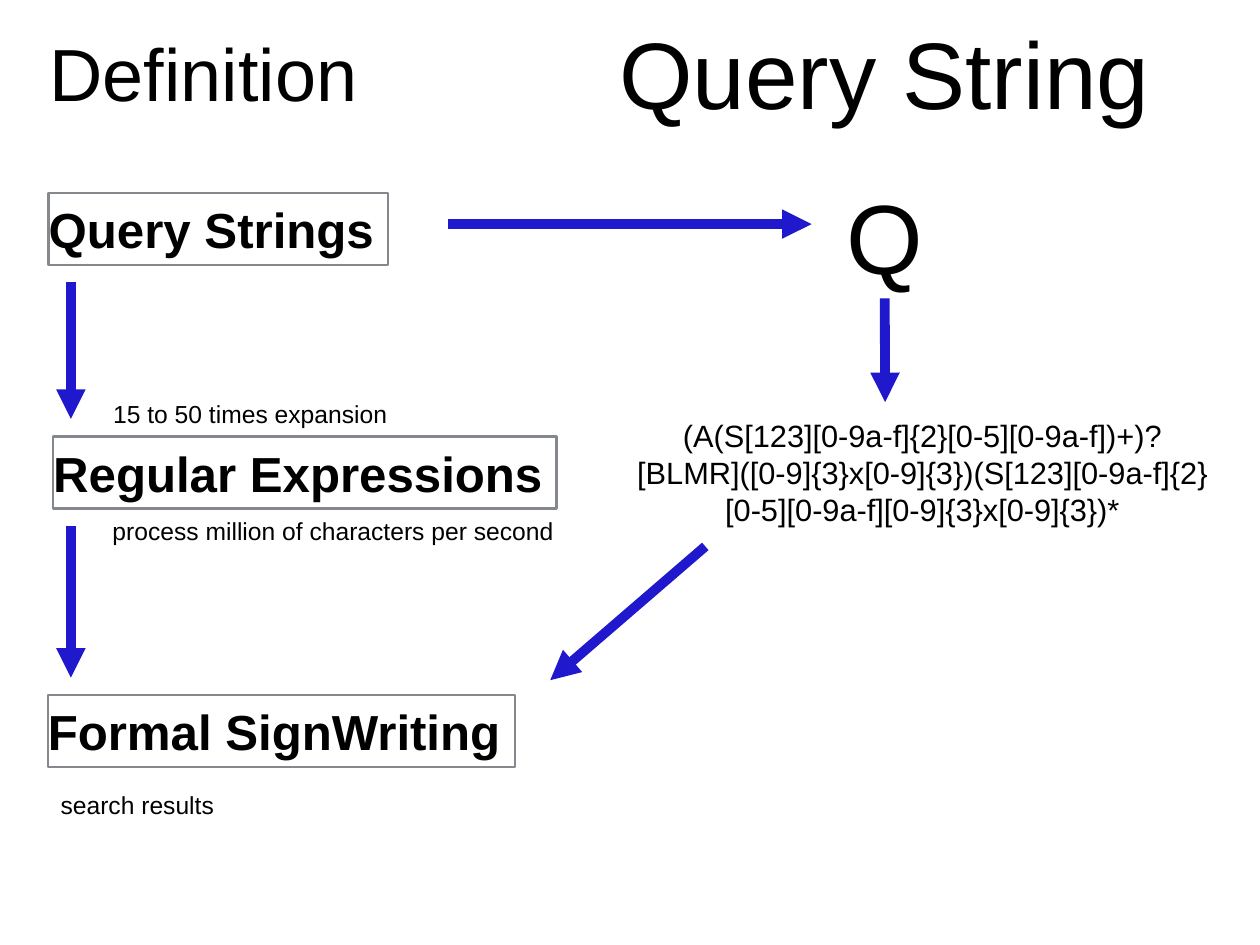
from lxml import etree
from pptx import Presentation
from pptx.dml.color import RGBColor
from pptx.enum.shapes import MSO_CONNECTOR, MSO_SHAPE
from pptx.enum.text import MSO_ANCHOR, MSO_AUTO_SIZE, PP_ALIGN
from pptx.oxml.ns import qn
from pptx.util import Inches, Pt

BLACK, GREY, BLUE = "000000", "85888D", "1F18CD"
REGEX = ("(A(S[123][0-9a-f]{2}[0-5][0-9a-f])+)?"
         "[BLMR]([0-9]{3}x[0-9]{3})"
         "(S[123][0-9a-f]{2}[0-5][0-9a-f][0-9]{3}x[0-9]{3})*")


def color(value):
    return RGBColor.from_string(value)


def write(sp, text, size, align=PP_ALIGN.CENTER, bold=False, inset=0, wrap=True):
    """Fill a shape with one formatted paragraph."""
    tf = sp.text_frame
    frame = {"word_wrap": wrap, "auto_size": MSO_AUTO_SIZE.NONE,
             "vertical_anchor": MSO_ANCHOR.MIDDLE}
    for side in ("left", "top", "right", "bottom"):
        frame[f"margin_{side}"] = Inches(inset)
    for name, value in frame.items():
        setattr(tf, name, value)
    p = tf.paragraphs[0]
    p.alignment = align
    r = p.add_run()
    r.text = text
    for name, value in {"name": "Arial", "size": Pt(size), "bold": bold}.items():
        setattr(r.font, name, value)
    r.font.color.rgb = color(BLACK)


def add_text(s, box, text, size, **options):
    sp = s.shapes.add_textbox(*map(Inches, box))
    write(sp, text, size, **options)
    return sp


def add_stage(s, box, text):
    """Outlined box naming one stage of the search."""
    sp = s.shapes.add_shape(MSO_SHAPE.RECTANGLE, *map(Inches, box))
    sp.shadow.inherit = False
    sp.fill.background()
    sp.line.color.rgb = color(GREY)
    sp.line.width = Pt(2)
    write(sp, text, 40, align=PP_ALIGN.LEFT, bold=True)


def add_arrow(s, start, end):
    cxn = s.shapes.add_connector(MSO_CONNECTOR.STRAIGHT, *map(Inches, start + end))
    cxn.line.color.rgb = color(BLUE)
    cxn.line.width = Pt(8)
    etree.SubElement(cxn.line._get_or_add_ln(), qn("a:tailEnd"), type="triangle")
    etree.SubElement(cxn._element.spPr, qn("a:effectLst"))
    return cxn


def add_headings(s, box):
    """Title on the left, example heading on the right."""
    x, y, w, h = box
    title = s.shapes.title
    place = {"left": x, "top": y, "width": 5.75, "height": h}
    for name, value in place.items():
        setattr(title, name, Inches(value))
    write(title, "Definition", 60, align=PP_ALIGN.LEFT)
    add_text(s, (x + 6.11, y, w - 6.11, h), "Query String", 76.8)


def add_definition(s, box):
    """Column of stages with captions and downward arrows."""
    x, y, w, h = box
    stages = [("Query Strings", 0.01, 0, 3.83),
              ("Regular Expressions", 0.06, 2.75, 5.68),
              ("Formal SignWriting", 0, 5.67, 5.27)]
    for text, dx, dy, width in stages:
        add_stage(s, (x + dx, y + dy, width, 0.81), text)
    captions = [("15 to 50 times expansion", 0.67, 2.27, 3.23),
                ("process million of characters per second", 0.62, 3.59, 5.2),
                ("search results", 0.08, 6.68, 1.86)]
    for text, dx, dy, width in captions:
        add_text(s, (x + dx, y + dy, width, 0.44), text, 20, inset=0.06, wrap=False)
    for top, bottom in ((1, 2.55), (3.76, 5.47)):
        add_arrow(s, (x + 0.26, y + top), (x + 0.26, y + bottom))


def add_example(s, box):
    """Query symbol leading down to its regular expression."""
    x, y, w, h = box
    query = add_text(s, (x + 2.29, y, 1.23, 1.44), "Q", 80)
    add_text(s, (x, y + 2.72, w, 1.36), REGEX, 25, inset=0.06)
    down = add_arrow(s, (x + 2.91, y + 1.44), (x + 2.91, y + 2.61))
    down.begin_connect(query, 2)


def main():
    prs = Presentation()
    prs.slide_width, prs.slide_height = Inches(14.22), Inches(10.67)
    s = prs.slides.add_slide(prs.slide_layouts[5])
    add_headings(s, (0.56, 0.11, 12.74, 1.4))
    add_definition(s, (0.54, 2.18, 5.82, 7.12))
    add_example(s, (7.08, 1.93, 6.66, 4.08))
    # Arrows between the two columns
    add_arrow(s, (5.06, 2.53), (9.16, 2.53))
    add_arrow(s, (7.96, 6.17), (6.21, 7.68))
    prs.save("out.pptx")


if __name__ == "__main__":
    main()
